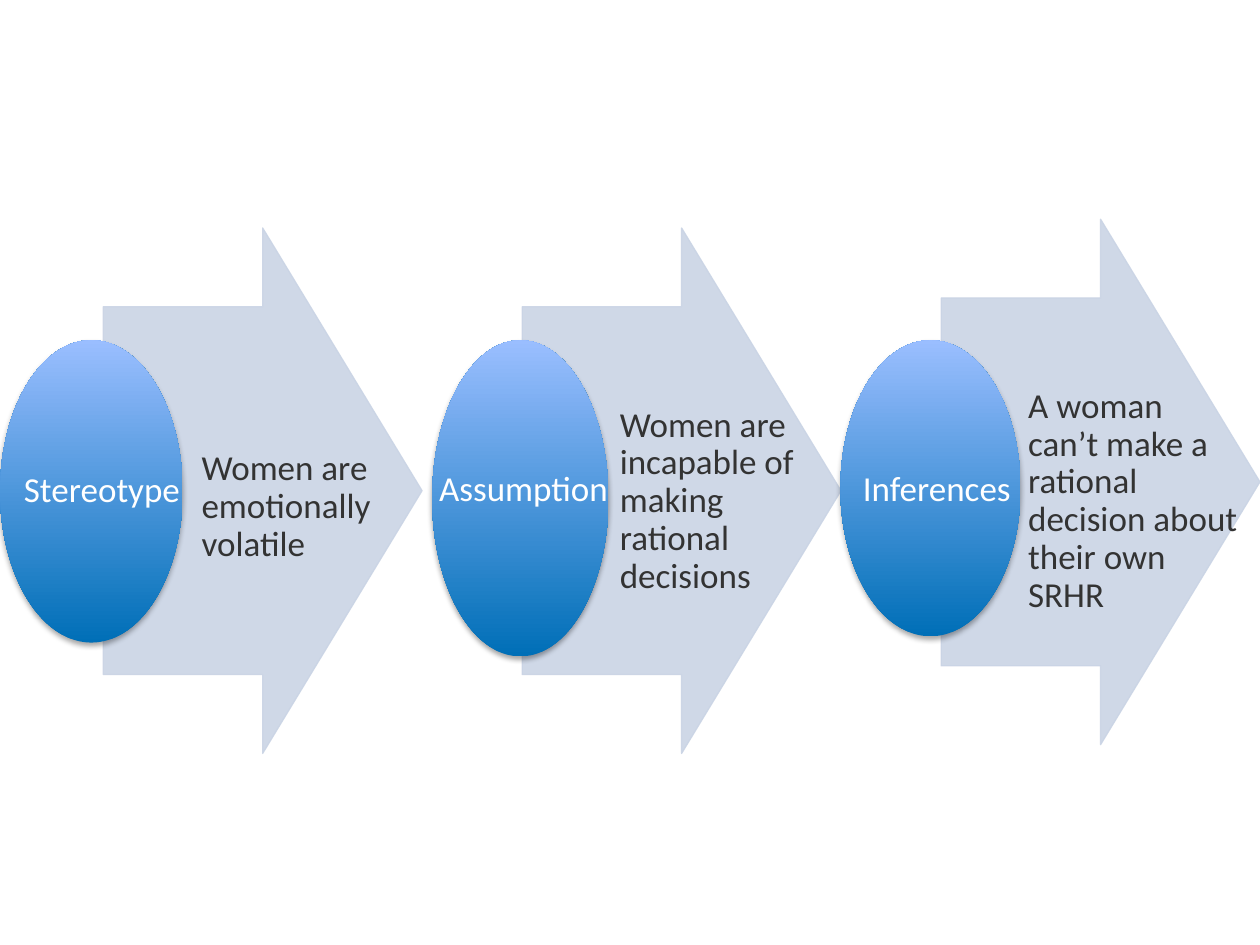
from dataclasses import dataclass

from lxml.etree import SubElement
from pptx import Presentation
from pptx.dml.color import RGBColor
from pptx.enum.shapes import MSO_SHAPE as Preset
from pptx.enum.text import MSO_ANCHOR as Anchor, PP_ALIGN as Align
from pptx.oxml.ns import qn
from pptx.util import Inches, Pt


@dataclass(frozen=True)
class Theme:
    arrow: str = "CAD4E5"
    oval_bottom: str = "006FB7"
    oval_top: str = "9ABEFF"
    label: str = "FFFFFF"
    body: str = "333333"
    shadow: str = "000000"
    font: str = "Calibri"
    size: int = 20


@dataclass(frozen=True)
class Stage:
    label: str
    body: str
    arrow_top: float
    oval: tuple
    label_box: tuple
    body_box: tuple


THEME = Theme()
FIRST_COLUMN = 0.82
COLUMN_PITCH = 3.325
ARROW_WIDTH, ARROW_HEIGHT = 2.53, 4.17
OVAL_TOP = 2.7
LABEL_HEIGHT = 0.32

STAGES = (
    Stage("Stereotype", "Women are emotionally volatile", 1.81,
          (0, 1.45, 2.4), (0.16, 3.74, 1.3), (1.59, 3.56, 1.9, 0.93)),
    Stage("Assumption", "Women are incapable of making rational decisions", 1.81,
          (3.43, 1.4, 2.51), (3.26, 3.73, 1.79), (4.91, 3.21, 1.54, 1.54)),
    Stage("Inferences", "A woman can’t make a rational decision about their own SRHR", 1.74,
          (6.67, 1.43, 2.35), (6.79, 3.73, 1.29), (8.15, 3.06, 1.69, 1.84)),
)


def rgb(color):
    return RGBColor.from_string(color)


def add_preset(slide, preset, box):
    shape = slide.shapes.add_shape(preset, *map(Inches, box))
    shape.shadow.inherit = False
    return shape


def add_arrow(slide, left, top):
    arrow = add_preset(slide, Preset.RIGHT_ARROW, (left, top, ARROW_WIDTH, ARROW_HEIGHT))
    arrow.adjustments[0] = 0.7
    arrow.adjustments[1] = 0.5
    arrow.fill.solid()
    arrow.fill.fore_color.rgb = rgb(THEME.arrow)
    arrow.line.color.rgb = rgb(THEME.arrow)
    arrow.line.width = Pt(0.75)
    for color in arrow.element.spPr.iter(qn("a:srgbClr")):
        SubElement(color, qn("a:alpha"), val="90000")


def add_soft_shadow(shape):
    effects = shape.element.spPr.find(qn("a:effectLst"))
    shadow = SubElement(effects, qn("a:outerShdw"), blurRad=str(Pt(3)),
                        dist=str(Pt(1.8)), dir="5400000", rotWithShape="0")
    color = SubElement(shadow, qn("a:srgbClr"), val=THEME.shadow)
    SubElement(color, qn("a:alpha"), val="35000")


def add_oval(slide, left, width, height):
    oval = add_preset(slide, Preset.OVAL, (left, OVAL_TOP, width, height))
    oval.fill.gradient()
    oval.fill.gradient_angle = 90
    for stop, color in zip(oval.fill.gradient_stops, (THEME.oval_bottom, THEME.oval_top)):
        stop.color.rgb = rgb(color)
    oval.line.fill.background()
    add_soft_shadow(oval)


def add_text(slide, text, box, color, alignment):
    text_frame = slide.shapes.add_textbox(*map(Inches, box)).text_frame
    text_frame.word_wrap = True
    text_frame.vertical_anchor = Anchor.MIDDLE
    for side in ("left", "right", "top", "bottom"):
        setattr(text_frame, f"margin_{side}", Inches(0.01))
    text_frame.text = text
    paragraph = text_frame.paragraphs[0]
    paragraph.alignment = alignment
    paragraph.line_spacing = 0.9
    font = paragraph.runs[0].font
    font.name = THEME.font
    font.size = Pt(THEME.size)
    font.color.rgb = rgb(color)


def add_stage(slide, column, stage):
    add_arrow(slide, FIRST_COLUMN + column * COLUMN_PITCH, stage.arrow_top)
    add_text(slide, stage.body, stage.body_box, THEME.body, Align.LEFT)
    add_oval(slide, *stage.oval)
    add_text(slide, stage.label, (*stage.label_box, LABEL_HEIGHT), THEME.label, Align.CENTER)


def main():
    presentation = Presentation()
    presentation.slide_width = Inches(10)
    presentation.slide_height = Inches(7.5)
    slide = presentation.slides.add_slide(presentation.slide_layouts[6])
    for column, stage in enumerate(STAGES):
        add_stage(slide, column, stage)
    presentation.save("out.pptx")


if __name__ == "__main__":
    main()
